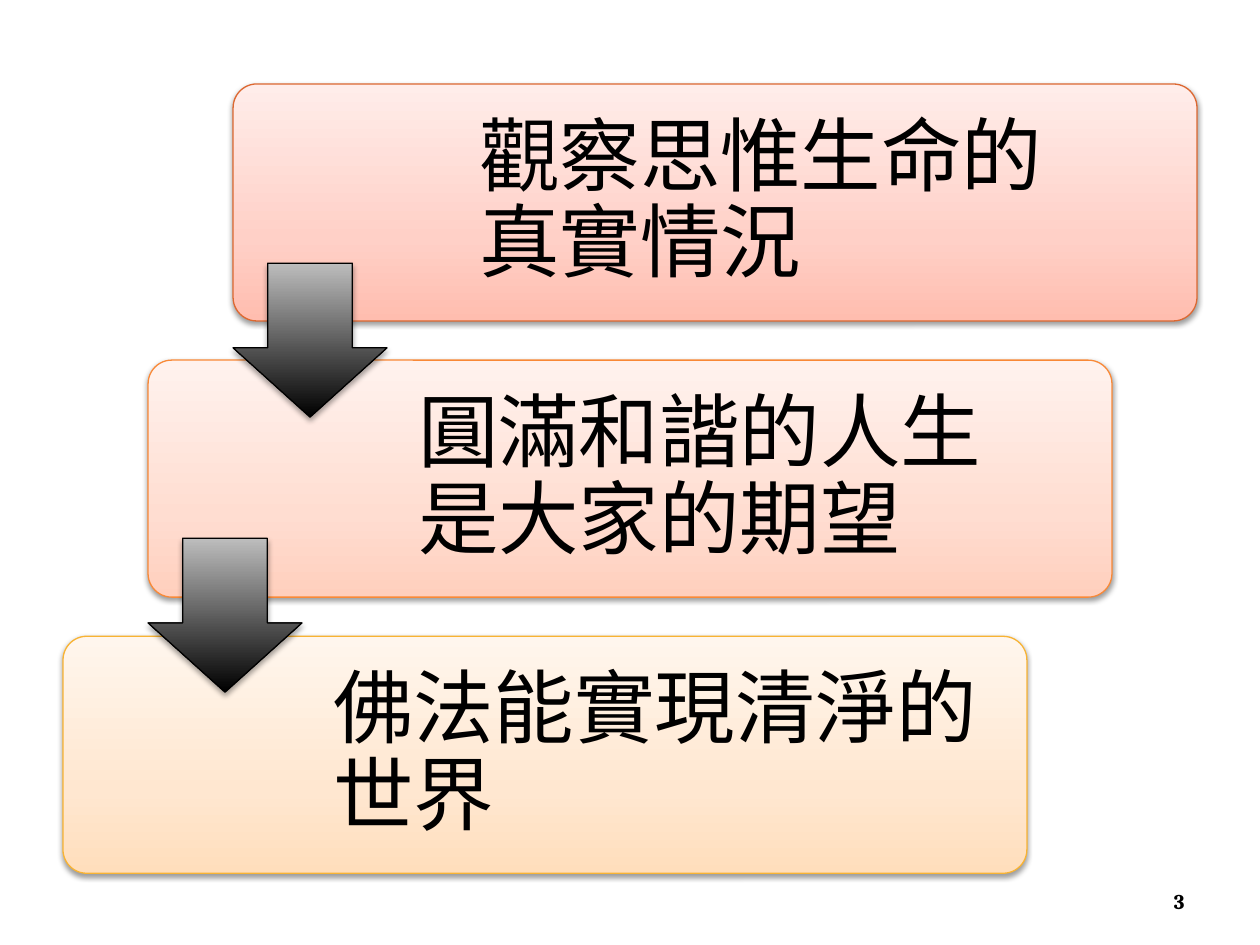
from lxml import etree
from pptx import Presentation
from pptx.dml.color import RGBColor
from pptx.enum.shapes import MSO_SHAPE
from pptx.enum.text import MSO_ANCHOR, PP_ALIGN
from pptx.oxml.ns import qn
from pptx.util import Pt

CARD, ARROW = MSO_SHAPE.ROUNDED_RECTANGLE, MSO_SHAPE.DOWN_ARROW
MIDDLE = MSO_ANCHOR.MIDDLE
LEFT, RIGHT = PP_ALIGN.LEFT, PP_ALIGN.RIGHT

BLACK = "000000"
CJK_FONT = "Noto Sans CJK SC"
CARD_W, CARD_H = 550.8, 135.4
CARD_LEFT, CARD_TOP = 133.2, 48
STEP_X, STEP_Y = -48.6, 157.8
ARROW_SIZE, ARROW_TOP, ARROW_STEP = 88, 150.4, 157.2

# Text, left inset, outline, gradient from bottom to top
STEPS = [
    ("觀察思惟生命的\v真實情況", 0, "DD6831", ("FFBDAF", "FFD0C7", "FFEDEA")),
    ("圓滿和諧的人生\v是大家的期望", 13.7, "F98937", ("FFCFBD", "FFDDD1", "FFF2EE")),
    ("佛法能實現清淨的世界", 13.7, "F8B333", ("FFDEBC", "FFE7D0", "FFF6ED")),
]


def rgb(value):
    return RGBColor.from_string(value)


def add_child(parent, tag, **attrs):
    return etree.SubElement(parent, qn(tag), {k: str(v) for k, v in attrs.items()})


def set_gradient(sp, stops):
    sp.fill.gradient()
    sp.fill.gradient_angle = 90
    gs_list = sp._element.spPr.find(qn("a:gradFill")).find(qn("a:gsLst"))
    for gs in list(gs_list):
        gs_list.remove(gs)
    for percent, color in stops:
        gs = add_child(gs_list, "a:gs", pos=percent * 1000)
        add_child(gs, "a:srgbClr", val=color)


def set_shadow(sp, distance, opacity):
    sp.shadow.inherit = False
    effects = sp._element.spPr.find(qn("a:effectLst"))
    shadow = add_child(effects, "a:outerShdw", blurRad=Pt(3.1), dist=Pt(distance),
                       dir=5400000, rotWithShape=0)
    color = add_child(shadow, "a:srgbClr", val=BLACK)
    add_child(color, "a:alpha", val=opacity * 1000)


def add_block(slide, kind, box, adjustments, stops, line, shadow):
    sp = slide.shapes.add_shape(kind, *map(Pt, box))
    for i, value in enumerate(adjustments):
        sp.adjustments[i] = value
    set_gradient(sp, stops)
    sp.line.color.rgb = rgb(line)
    sp.line.width = Pt(0.75)
    set_shadow(sp, *shadow)


def add_text(slide, box, text, size, font, margins, align=LEFT, bold=False, spacing=None):
    tf = slide.shapes.add_textbox(*map(Pt, box)).text_frame
    tf.word_wrap = True
    tf.vertical_anchor = MIDDLE
    tf.margin_left, tf.margin_top, tf.margin_right, tf.margin_bottom = map(Pt, margins)
    p = tf.paragraphs[0]
    p.text = text
    p.alignment = align
    p.line_spacing = spacing
    for r in p.runs:
        r.font.size = Pt(size)
        r.font.name = font
        r.font.bold = bold
        r.font.color.rgb = rgb(BLACK)
        add_child(r.font._element, "a:ea", typeface=font)


def main():
    prs = Presentation()
    prs.slide_width, prs.slide_height = Pt(720), Pt(540)
    slide = prs.slides.add_slide(prs.slide_layouts[6])

    # Staggered cards
    for i, (text, inset, line, colors) in enumerate(STEPS):
        x, y = CARD_LEFT + i * STEP_X, CARD_TOP + i * STEP_Y
        add_block(slide, CARD, (x, y, CARD_W, CARD_H), [0.1],
                  zip((0, 35, 100), colors), line, (1.6, 38))
        add_text(slide, (x + 140.6, y + 4, 406, 127.4), text, 46, CJK_FONT,
                 (inset, 13.7, inset, 13.7), spacing=0.9)

    # Arrows between the cards
    for i in range(len(STEPS) - 1):
        box = (CARD_LEFT + i * STEP_X, ARROW_TOP + i * ARROW_STEP, ARROW_SIZE, ARROW_SIZE)
        add_block(slide, ARROW, box, [0.55, 0.45],
                  [(0, BLACK), (100, "BDBDBD")], BLACK, (1.8, 35))

    # Slide number
    add_text(slide, (516, 500.4, 168, 28.8), "3", 12, "Cambria",
             (7.2, 3.6, 7.2, 3.6), RIGHT, bold=True)

    prs.save("out.pptx")


if __name__ == "__main__":
    main()
